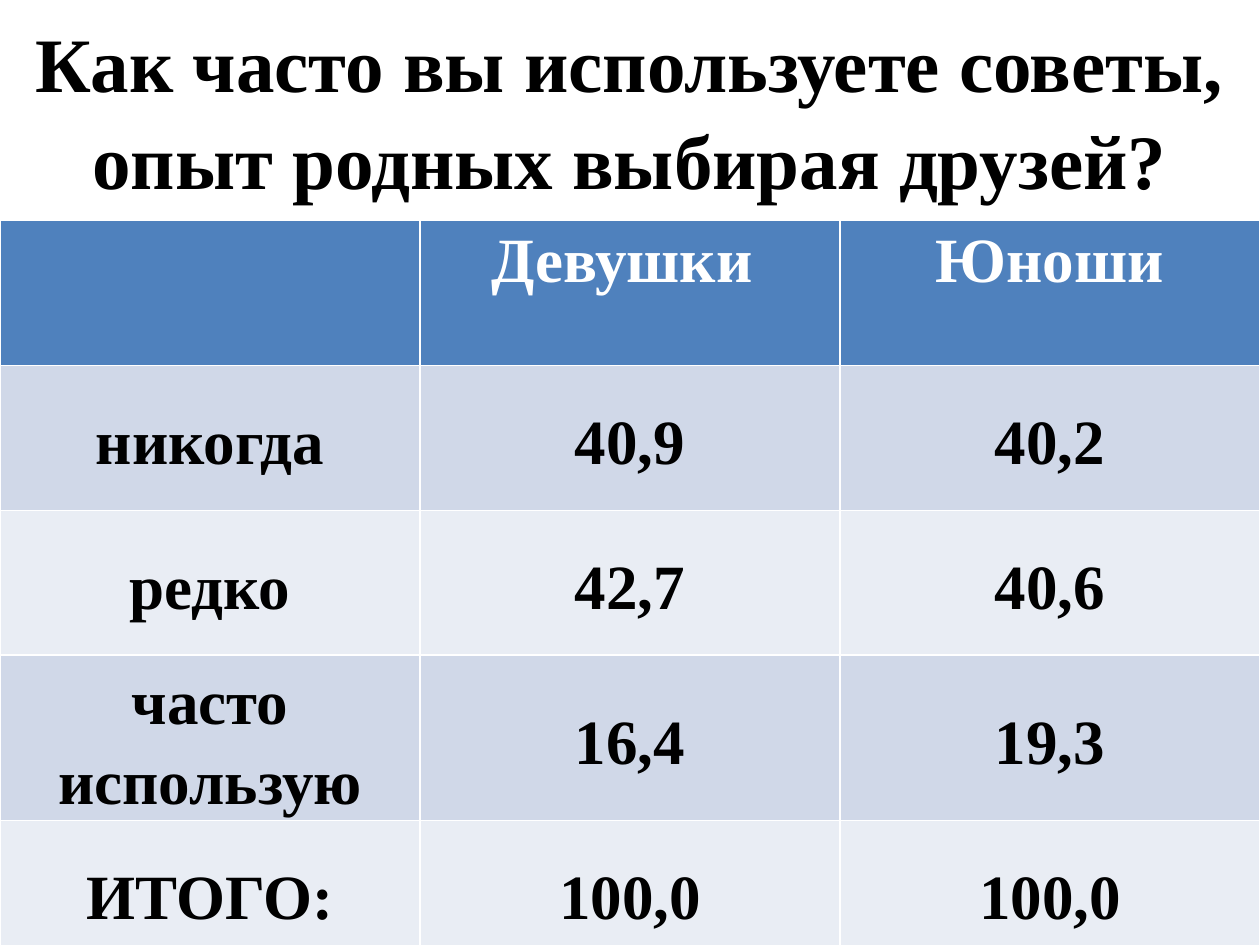
from dataclasses import dataclass

from pptx import Presentation
from pptx.dml.color import RGBColor as RGB
from pptx.enum.text import MSO_ANCHOR as Anchor, MSO_AUTO_SIZE as Fit, PP_ALIGN as Align
from pptx.util import Inches, Pt


@dataclass(frozen=True)
class Theme:
    font: str = "Times New Roman"
    title: int = 44
    body: int = 36
    ink: str = "000000"
    light: str = "FFFFFF"
    head: str = "4F81BD"
    bands: tuple = ("D0D8E8", "E9EDF4")


THEME = Theme()
TITLE = "Как часто вы используете советы, опыт родных выбирая друзей?"
HEADS = ["", "Девушки ", "Юноши"]
ROWS = [
    ["никогда", "40,9", "40,2"],
    ["редко", "42,7", "40,6"],
    ["часто использую", "16,4", "19,3"],
    ["ИТОГО:", "100,0", "100,0"],
]


def add_text(frame, text, size, color, space):
    """Write one centred bold run into the first paragraph."""
    para = frame.paragraphs[0]
    para.alignment = Align.CENTER
    para.line_spacing = space
    run = para.add_run()
    run.text = text
    font = run.font
    font.name, font.size, font.bold = THEME.font, Pt(size), True
    font.color.rgb = RGB.from_string(color)


def add_title(slide, left, top, width, height):
    title = slide.shapes.title
    title.left, title.top = Inches(left), Inches(top)
    title.width, title.height = Inches(width), Inches(height)
    frame = title.text_frame
    frame.word_wrap = True
    frame.auto_size = Fit.NONE
    frame.vertical_anchor = Anchor.MIDDLE
    add_text(frame, TITLE, THEME.title, THEME.ink, 1.05)


def fill_cell(cell, text, fill, color, space):
    cell.fill.solid()
    cell.fill.fore_color.rgb = RGB.from_string(fill)
    if text:
        add_text(cell.text_frame, text, THEME.body, color, space)


def add_grid(slide, left, top, width, height):
    # The default table style draws the white rules
    grid = slide.shapes.add_table(
        len(ROWS) + 1, len(HEADS),
        Inches(left), Inches(top), Inches(width), Inches(height),
    ).table

    # Header row
    for col, text in enumerate(HEADS):
        fill_cell(grid.cell(0, col), text, THEME.head, THEME.light, 1.0)

    # Answer rows in alternating bands
    for row, texts in enumerate(ROWS):
        band = THEME.bands[row % 2]
        for col, text in enumerate(texts):
            cell = grid.cell(row + 1, col)
            cell.vertical_anchor = Anchor.MIDDLE
            cell.margin_left = cell.margin_right = Inches(0.02)
            cell.margin_top = cell.margin_bottom = Inches(0.02)
            fill_cell(cell, text, band, THEME.ink, 1.15)


def main():
    deck = Presentation()
    deck.slide_width, deck.slide_height = Inches(10), Inches(7.5)
    slide = deck.slides.add_slide(deck.slide_layouts[5])
    add_title(slide, 0, 0, 10, 1.72)
    add_grid(slide, 0, 1.75, 10, 5.75)
    deck.save("out.pptx")


if __name__ == "__main__":
    main()
